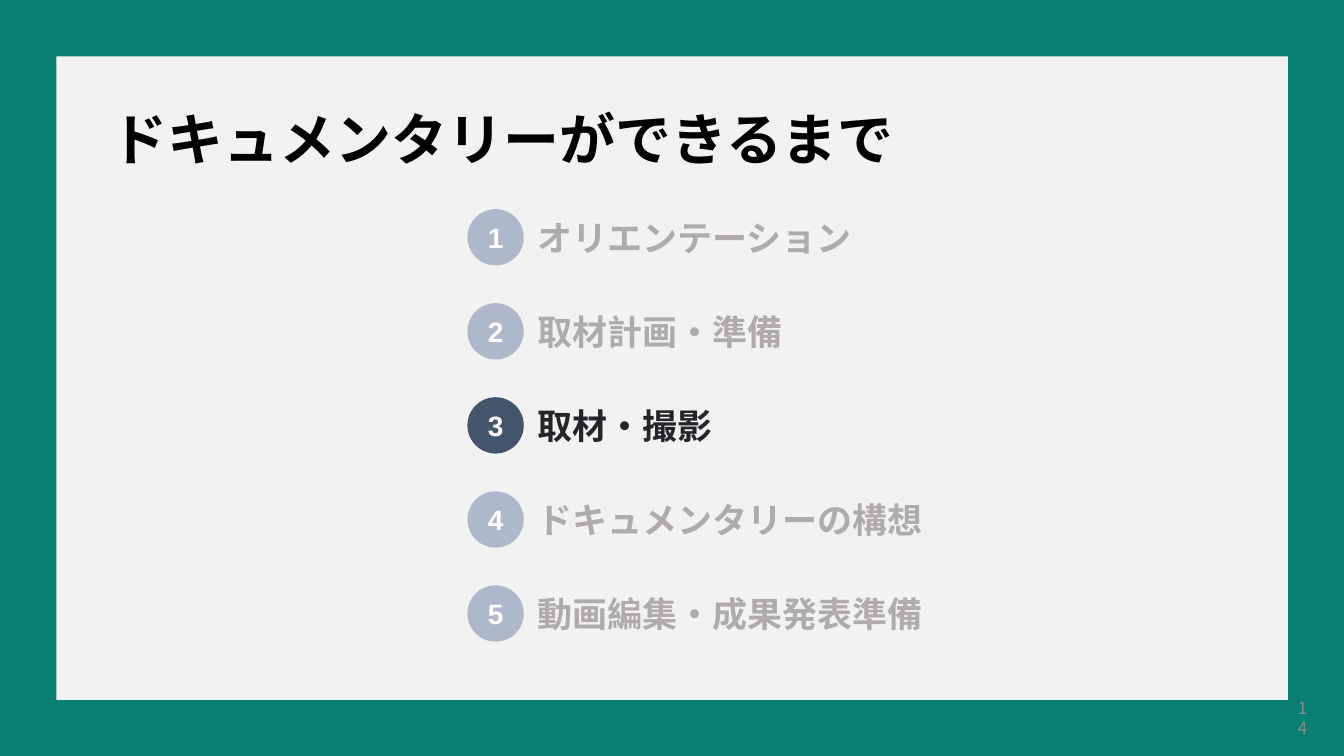
import pptx
import pptx.dml.color
import pptx.enum.shapes
import pptx.enum.text
import pptx.oxml
import pptx.oxml.ns
import pptx.util

Cm = pptx.util.Cm
Align = pptx.enum.text.PP_ALIGN
Anchor = pptx.enum.text.MSO_ANCHOR
Shape = pptx.enum.shapes.MSO_SHAPE

COLOURS = {
    "frame": "0A8073", "panel": "F2F2F2", "title": "000000",
    "badge": "ADB9CA", "badge_now": "44546A", "number": "FFFFFF",
    "step": "AFABAB", "step_now": "232529", "page": "8C8C8C",
}
JAPANESE = "Noto Sans CJK JP"
STEPS = ["オリエンテーション", "取材計画・準備", "取材・撮影",
         "ドキュメンタリーの構想", "動画編集・成果発表準備"]
CURRENT_STEP = 3
MARGINS = ("margin_left", "margin_top", "margin_right", "margin_bottom")


def colour(name):
    return pptx.dml.color.RGBColor.from_string(COLOURS[name])


def fill_plain(shape, name):
    shape.shadow.inherit = False
    shape.fill.solid()
    shape.fill.fore_color.rgb = colour(name)
    shape.line.fill.background()


def write(shape, text, ink, size, font=JAPANESE, bold=True, align=Align.LEFT,
          anchor=Anchor.MIDDLE, margin=0, wrap=True):
    frame = shape.text_frame
    frame.text = text
    frame_format = {"word_wrap": wrap, "vertical_anchor": anchor,
                    "auto_size": pptx.enum.text.MSO_AUTO_SIZE.NONE}
    frame_format.update(dict.fromkeys(MARGINS, Cm(margin)))
    for attribute, value in frame_format.items():
        setattr(frame, attribute, value)
    paragraph = frame.paragraphs[0]
    paragraph.alignment = align
    run = paragraph.runs[0]
    run_format = {"size": pptx.util.Pt(size), "bold": bold, "name": font}
    for attribute, value in run_format.items():
        setattr(run.font, attribute, value)
    run.font.color.rgb = colour(ink)
    # East Asian glyphs take their own typeface entry
    east_asian = pptx.oxml.parse_xml(
        f'<a:ea {pptx.oxml.ns.nsdecls("a")} typeface="{font}"/>')
    run.font._element.find(pptx.oxml.ns.qn("a:latin")).addnext(east_asian)
    return paragraph


def add_panel(slide, left, top, width, height):
    """Light panel on the coloured frame, sent behind the title."""
    slide.background.fill.solid()
    slide.background.fill.fore_color.rgb = colour("frame")
    panel = slide.shapes.add_shape(
        Shape.RECTANGLE, Cm(left), Cm(top), Cm(width), Cm(height))
    fill_plain(panel, "panel")
    slide.shapes.title.element.addprevious(panel.element)


def place_title(slide, left, top, width, height):
    title = slide.shapes.title
    place = {"left": left, "top": top, "width": width, "height": height}
    for attribute, value in place.items():
        setattr(title, attribute, Cm(value))
    paragraph = write(title, "ドキュメンタリーができるまで", "title", 40,
                      anchor=Anchor.TOP)
    paragraph.line_spacing = 0.9


def add_step(slide, number, text, left, top, width, height):
    """Numbered circle with its label, grouped."""
    state = "_now" if number == CURRENT_STEP else ""
    step = slide.shapes.add_group_shape()
    badge = step.shapes.add_shape(
        Shape.OVAL, Cm(left), Cm(top), Cm(height), Cm(height))
    fill_plain(badge, "badge" + state)
    write(badge, str(number), "number", 20, font="Arial", align=Align.CENTER)
    indent = height + 0.35
    label = step.shapes.add_textbox(
        Cm(left + indent), Cm(top), Cm(width - indent), Cm(height))
    write(label, text, "step" + state, 25, wrap=False)


def add_steps(slide, left, top, width, height):
    badge_size = 1.42
    pitch = (height - badge_size) / (len(STEPS) - 1)
    for index, text in enumerate(STEPS):
        add_step(slide, index + 1, text, left, top + index * pitch,
                 width, badge_size)


def add_page_number(slide, left, top, width, height):
    page = slide.shapes.add_textbox(Cm(left), Cm(top), Cm(width), Cm(height))
    write(page, "14", "page", 12, bold=False, align=Align.RIGHT, margin=0.25)


def main():
    deck = pptx.Presentation()
    deck.slide_width, deck.slide_height = Cm(33.87), Cm(19.05)
    slide = deck.slides.add_slide(deck.slide_layouts[5])
    add_panel(slide, 1.42, 1.42, 31.04, 16.22)
    place_title(slide, 2.82, 2.82, 28.22, 1.55)
    add_steps(slide, 11.78, 5.27, 11.9, 10.9)
    add_page_number(slide, 32.46, 17.81, 0.71, 0.56)
    deck.save("out.pptx")


if __name__ == "__main__":
    main()
